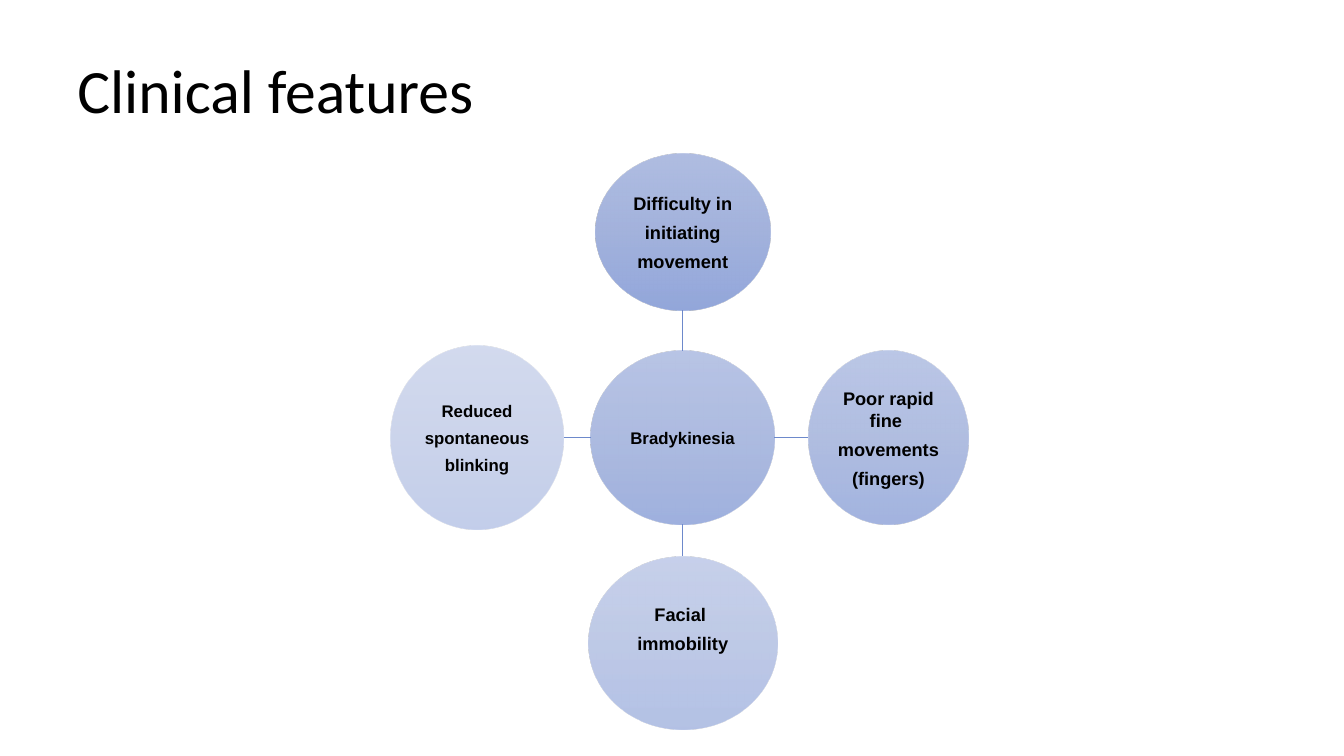
import pptx
import pptx.util
import pptx.dml.color
import pptx.enum.shapes
import pptx.enum.text
import pptx.oxml.ns
import lxml.etree

W, H = pptx.util.Inches(13.33), pptx.util.Inches(7.5)
COL, ROW = W / 100, H / 100
ORBIT = 0.34
COLORS = {"text": "000000", "spoke": "6D89CB",
          "light": "A8B7DF", "middle": "9AABD9", "dark": "889ED7"}
HUB = (["Bradykinesia"], 12, (13.65, 22.93), 80, 0)
FEATURES = [
    ((0, -1), (["Difficulty in", "initiating", "movement"], 13, (13.05, 20.67), 90, 0)),
    ((1, 0), (["Poor rapid fine ", "movements", "(fingers)"], 13, (11.93, 23.07), 77, 0)),
    ((0, 1), (["Facial ", "immobility"], 13, (14.03, 22.93), 63, 4)),
    ((-1, 0), (["Reduced", "spontaneous", "blinking"], 12, (12.9, 24.27), 50, 0)),
]


def rgb(name):
    return pptx.dml.color.RGBColor.from_string(COLORS[name])


def grid_box(left, top, width, height):
    return [round(v) for v in (left * COL, top * ROW, width * COL, height * ROW)]


def add_run(p, text, font, size, bold=False):
    r = p.add_run()
    r.text = text
    r.font.name, r.font.size, r.font.bold = font, pptx.util.Pt(size), bold
    r.font.color.rgb = rgb("text")


def shade(sp, opacity):
    qn = pptx.oxml.ns.qn
    sp.fill.gradient()
    sp.fill.gradient_angle = 270
    stops = sp.element.spPr.find(qn("a:gradFill")).find(qn("a:gsLst"))
    for stop in list(stops):
        stops.remove(stop)
    for pos, name in ((0, "light"), (50, "middle"), (100, "dark")):
        gs = lxml.etree.SubElement(stops, qn("a:gs"), pos=str(pos * 1000))
        color = lxml.etree.SubElement(gs, qn("a:srgbClr"), val=COLORS[name])
        lxml.etree.SubElement(color, qn("a:alpha"), val=str(opacity * 1000))


def add_title(slide, box, text):
    title = slide.shapes.title
    title.left, title.top, title.width, title.height = box
    title.text_frame.vertical_anchor = pptx.enum.text.MSO_ANCHOR.MIDDLE
    p = title.text_frame.paragraphs[0]
    p.alignment = pptx.enum.text.PP_ALIGN.LEFT
    p.line_spacing = 0.9
    add_run(p, text, "Calibri", 44)


def add_circle(slide, cx, cy, content):
    lines, size, (cols, rows), opacity, lift = content
    w, h = cols * COL, rows * ROW
    box = [round(v) for v in (cx - w / 2, cy - h / 2, w, h)]
    sp = slide.shapes.add_shape(pptx.enum.shapes.MSO_SHAPE.OVAL, *box)
    shade(sp, opacity)
    sp.line.fill.background()
    sp.shadow.inherit = False
    tf = sp.text_frame
    tf.word_wrap = True
    tf.vertical_anchor = pptx.enum.text.MSO_ANCHOR.MIDDLE
    tf.margin_left = tf.margin_right = tf.margin_top = pptx.util.Inches(0.01)
    tf.margin_bottom = round(lift * ROW)
    for i, line in enumerate(lines):
        p = tf.add_paragraph() if i else tf.paragraphs[0]
        p.alignment = pptx.enum.text.PP_ALIGN.CENTER
        p.space_after = pptx.util.Pt(0.4 * size if len(lines) > 1 else 0)
        add_run(p, line, "Arial", size, True)
    return sp


def add_spoke(slide, hub, circle, cx, cy, dx, dy):
    x1, y1 = cx + dx * hub.width / 2, cy + dy * hub.height / 2
    x2 = circle.left + circle.width * (1 - dx) / 2
    y2 = circle.top + circle.height * (1 - dy) / 2
    line = slide.shapes.add_connector(pptx.enum.shapes.MSO_CONNECTOR.STRAIGHT,
                                      *[round(v) for v in (x1, y1, x2, y2)])
    line.line.color.rgb = rgb("spoke")
    line.line.width = pptx.util.Pt(1)
    lxml.etree.SubElement(line._element.spPr, pptx.oxml.ns.qn("a:effectLst"))


def add_radial_diagram(slide, box):
    left, top, width, height = box
    cx, cy = left + width / 2, top + height / 2
    hub = add_circle(slide, cx, cy, HUB)
    for (dx, dy), content in FEATURES:
        circle = add_circle(slide, cx + dx * ORBIT * width,
                            cy + dy * ORBIT * height, content)
        add_spoke(slide, hub, circle, cx, cy, dx, dy)


def main():
    prs = pptx.Presentation()
    prs.slide_width, prs.slide_height = W, H
    slide = prs.slides.add_slide(prs.slide_layouts[5])
    add_title(slide, grid_box(5, 4, 90, 16.67), "Clinical features")
    add_radial_diagram(slide, grid_box(28.3, 17.87, 45, 80))
    prs.save("out.pptx")


if __name__ == "__main__":
    main()
